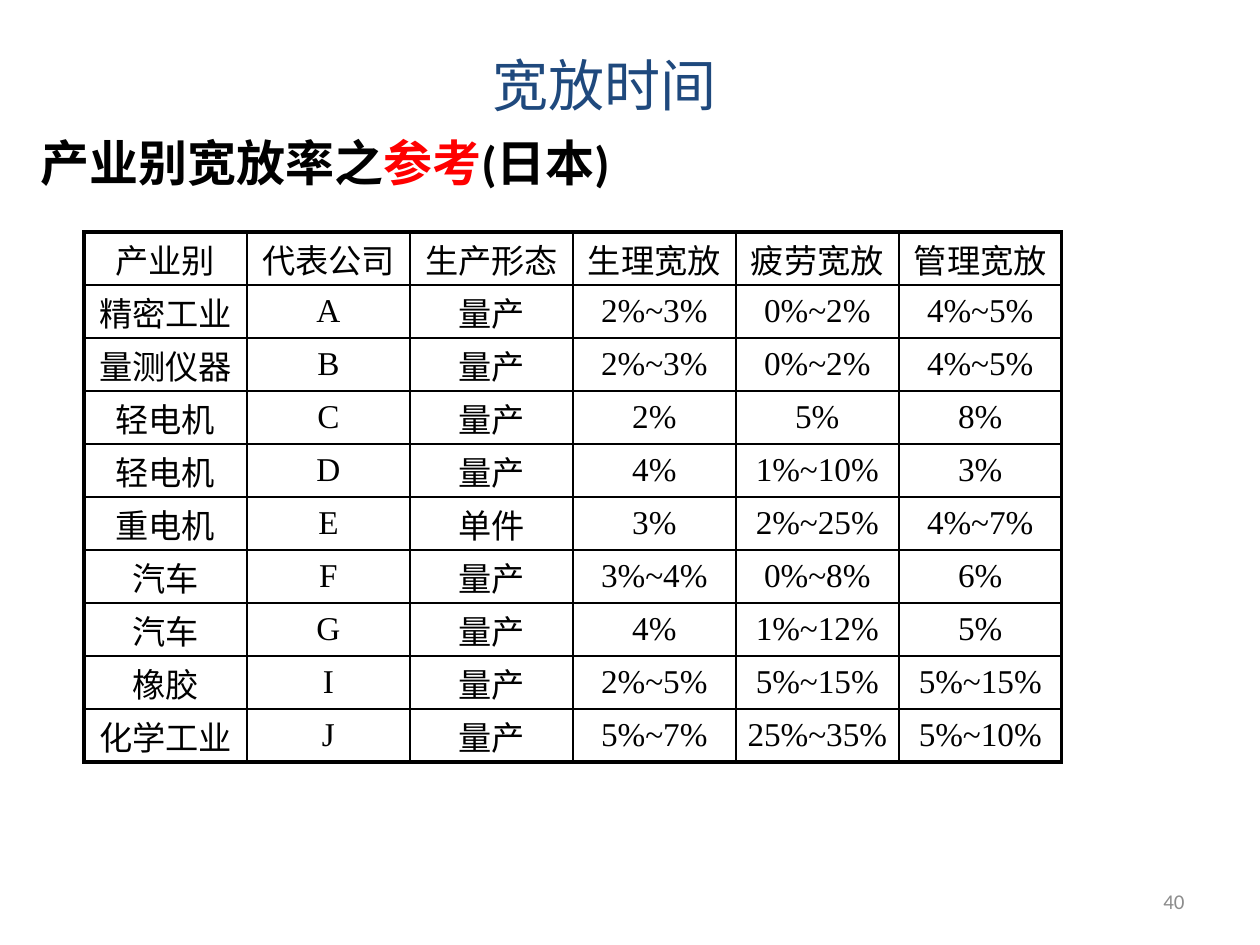
from lxml import etree
from pptx import Presentation
from pptx.dml.color import RGBColor
from pptx.enum.text import MSO_ANCHOR, PP_ALIGN
from pptx.oxml.ns import qn
from pptx.util import Pt

PX = 914400 / 126
MID, TOP = MSO_ANCHOR.MIDDLE, MSO_ANCHOR.TOP
LEFT, MID_X, RIGHT = PP_ALIGN.LEFT, PP_ALIGN.CENTER, PP_ALIGN.RIGHT
BLACK = "000000"
THIN, THICK = 1, 2.25

ROWS = [
    ["产业别", "代表公司", "生产形态", "生理宽放", "疲劳宽放", "管理宽放"],
    ["精密工业", "A", "量产", "2%~3%", "0%~2%", "4%~5%"],
    ["量测仪器", "B", "量产", "2%~3%", "0%~2%", "4%~5%"],
    ["轻电机", "C", "量产", "2%", "5%", "8%"],
    ["轻电机", "D", "量产", "4%", "1%~10%", "3%"],
    ["重电机", "E", "单件", "3%", "2%~25%", "4%~7%"],
    ["汽车", "F", "量产", "3%~4%", "0%~8%", "6%"],
    ["汽车", "G", "量产", "4%", "1%~12%", "5%"],
    ["橡胶", "I", "量产", "2%~5%", "5%~15%", "5%~15%"],
    ["化学工业", "J", "量产", "5%~7%", "25%~35%", "5%~10%"],
]


def px(n):
    return round(n * PX)


def color(code):
    return RGBColor.from_string(code)


def put(obj, form):
    for key, val in form.items():
        setattr(obj, key, val)


def place(shape, box):
    put(shape, dict(zip(("left", "top", "width", "height"), map(px, box))))


def write(para, runs, align):
    """Fill a paragraph with (text, size, colour, font, bold) runs."""
    para.alignment = align
    for text, size, code, name, bold in runs:
        run = para.add_run()
        run.text = text
        put(run.font, {"size": Pt(size), "name": name, "bold": bold})
        run.font.color.rgb = color(code)


def label(slide, box, runs, align, anchor):
    shape = slide.shapes.add_textbox(*map(px, box))
    put(shape.text_frame, {"word_wrap": True, "vertical_anchor": anchor})
    para = shape.text_frame.paragraphs[0]
    write(para, runs, align)
    return para


def title(slide, box):
    shape = slide.shapes.title
    place(shape, box)
    shape.text_frame.vertical_anchor = MID
    write(shape.text_frame.paragraphs[0],
          [("宽放时间", 32, "1F497D", "Calibri", False)], MID_X)


def heading(slide, box):
    runs = [(" ", 19.2, BLACK, "Calibri", False)]
    parts = [("产业别宽放率之", BLACK), ("参考", "FF0000"), ("(日本)", BLACK)]
    runs += [(text, 28, code, "Calibri", True) for text, code in parts]
    para = label(slide, box, runs, LEFT, TOP)
    para.space_before = Pt(4)


def edge(cell, sides):
    """Draw the cell borders; they must come before the fill."""
    props = cell._tc.get_or_add_tcPr()
    for i, (side, width) in enumerate(sides.items()):
        line = etree.Element(qn(f"a:ln{side}"), w=str(Pt(width)))
        fill = etree.SubElement(line, qn("a:solidFill"))
        etree.SubElement(fill, qn("a:srgbClr"), val=BLACK)
        props.insert(i, line)


def grid(slide, box):
    high, wide = len(ROWS), len(ROWS[0])
    table = slide.shapes.add_table(high, wide, *map(px, box)).table
    put(table, {"first_row": False, "horz_banding": False})
    pad = {"margin_left": px(6), "margin_right": px(6),
           "margin_top": px(3), "margin_bottom": px(3),
           "vertical_anchor": MID}
    for r, row in enumerate(ROWS):
        for c, text in enumerate(row):
            cell = table.cell(r, c)
            put(cell, pad)
            cell.fill.background()
            para = cell.text_frame.paragraphs[0]
            para.space_before = Pt(4)
            write(para, [(text, 19, BLACK, "Times New Roman", False)], MID_X)
            # Thick lines on the outer frame only
            outer = {"L": c == 0, "R": c == wide - 1,
                     "T": r == 0, "B": r == high - 1}
            edge(cell, {s: THICK if out else THIN for s, out in outer.items()})


def number(slide, box):
    label(slide, box, [("40", 12, "8C8C8C", "Calibri", False)], RIGHT, MID)


def main():
    deck = Presentation()
    put(deck, {"slide_width": px(1260), "slide_height": px(945)})
    slide = deck.slides.add_slide(deck.slide_layouts[5])
    heading(slide, (21, 126, 1166, 741))
    grid(slide, (84, 232, 978, 530))
    title(slide, (53, 21, 1103, 126))
    number(slide, (903, 876, 294, 50))
    deck.save("out.pptx")


if __name__ == "__main__":
    main()
